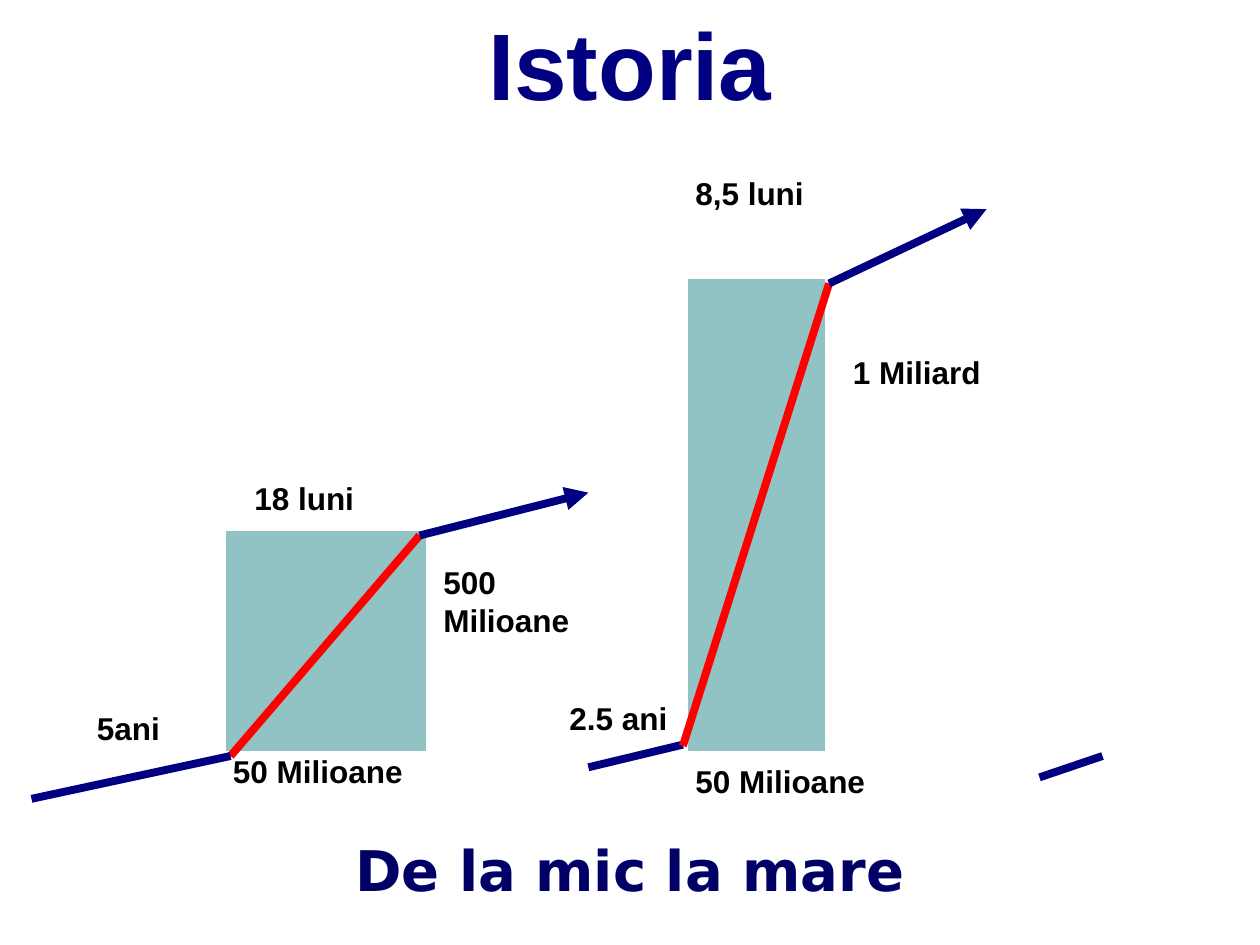
import pptx
import pptx.dml.color
import pptx.enum.shapes
import pptx.enum.text
import pptx.oxml
import pptx.oxml.ns
import pptx.util
from pptx.util import Inches

NAVY = pptx.dml.color.RGBColor(0x00, 0x00, 0x80)
DARK_NAVY = pptx.dml.color.RGBColor(0x00, 0x00, 0x66)
RED = pptx.dml.color.RGBColor(0xFF, 0x00, 0x00)
TEAL = pptx.dml.color.RGBColor(0x92, 0xC3, 0xC4)
WHITE = pptx.dml.color.RGBColor(0xFF, 0xFF, 0xFF)
BLACK = pptx.dml.color.RGBColor(0x00, 0x00, 0x00)
CENTER = pptx.enum.text.PP_ALIGN.CENTER
LEFT = pptx.enum.text.PP_ALIGN.LEFT

presentation = pptx.Presentation()
presentation.slide_width = Inches(10)
presentation.slide_height = Inches(7.5)
slide = presentation.slides.add_slide(presentation.slide_layouts[6])


def add_text(text, left, top, width, height, alignment, font_format):
    box = slide.shapes.add_textbox(Inches(left), Inches(top), Inches(width), Inches(height))
    box.text_frame.word_wrap = True
    box.text_frame.auto_size = pptx.enum.text.MSO_AUTO_SIZE.SHAPE_TO_FIT_TEXT
    paragraph = box.text_frame.paragraphs[0]
    paragraph.text = text
    paragraph.alignment = alignment
    font = paragraph.runs[0].font
    for name, value in font_format.items():
        if name == "color":
            font.color.rgb = value
        else:
            setattr(font, name, value)


# Title and closing line
title_format = {"name": "Arial", "size": pptx.util.Pt(54), "bold": True, "color": NAVY}
closing_format = {"name": "DejaVu Sans", "size": pptx.util.Pt(32), "bold": True, "color": DARK_NAVY}
add_text("Istoria", 0, 0, 10, 1, CENTER, title_format)
add_text("De la mic la mare", 0, 6.58, 10, 0.64, CENTER, closing_format)

# Growth periods
for left, top, width, height in [(1.75, 4.17, 1.67, 1.83), (5.42, 2.17, 1.17, 3.83)]:
    period = slide.shapes.add_shape(
        pptx.enum.shapes.MSO_SHAPE.RECTANGLE,
        Inches(left), Inches(top), Inches(width), Inches(height))
    period.shadow.inherit = False
    period.fill.solid()
    period.fill.fore_color.rgb = TEAL
    period.line.color.rgb = WHITE
    period.line.width = pptx.util.Pt(6)

# Growth curves: start, end, colour, arrowhead
segments = [
    ((1.83, 6), (3.33, 4.25), RED, False),
    ((0.25, 6.34), (1.83, 6), NAVY, False),
    ((3.33, 4.25), (4.67, 3.91), NAVY, True),
    ((4.67, 6.09), (5.42, 5.91), NAVY, False),
    ((5.42, 5.92), (6.58, 2.25), RED, False),
    ((6.58, 2.25), (7.83, 1.66), NAVY, True),
    ((8.25, 6.17), (8.75, 6), NAVY, False),
]
for start, end, color, has_arrow in segments:
    connector = slide.shapes.add_connector(
        pptx.enum.shapes.MSO_CONNECTOR.STRAIGHT, *map(Inches, start + end))
    connector.line.color.rgb = color
    connector.line.width = pptx.util.Pt(4.5)
    if has_arrow:
        arrowhead = pptx.oxml.parse_xml(
            f'<a:tailEnd {pptx.oxml.ns.nsdecls("a")} type="triangle"/>')
        connector.line._get_or_add_ln().append(arrowhead)
    properties = connector._element.spPr
    properties.append(pptx.oxml.parse_xml(f'<a:effectLst {pptx.oxml.ns.nsdecls("a")}/>'))

# Labels
label_format = {"name": "Arial", "size": pptx.util.Pt(18), "bold": True, "color": BLACK}
labels = [
    ("5ani", 0.67, 5.58, 0.83, 0.4),
    ("50 Milioane", 1.75, 5.92, 1.58, 0.4),
    ("500 Milioane", 3.42, 4.42, 1.58, 0.7),
    ("2.5 ani", 4.42, 5.5, 1.08, 0.4),
    ("50 Milioane", 5.42, 6, 1.58, 0.4),
    ("1 Miliard", 6.67, 2.75, 1.58, 0.4),
    ("18 luni", 1.92, 3.75, 1.33, 0.4),
    ("8,5 luni", 5.42, 1.33, 1.17, 0.4),
]
for label in labels:
    add_text(*label, LEFT, label_format)

presentation.save("out.pptx")
